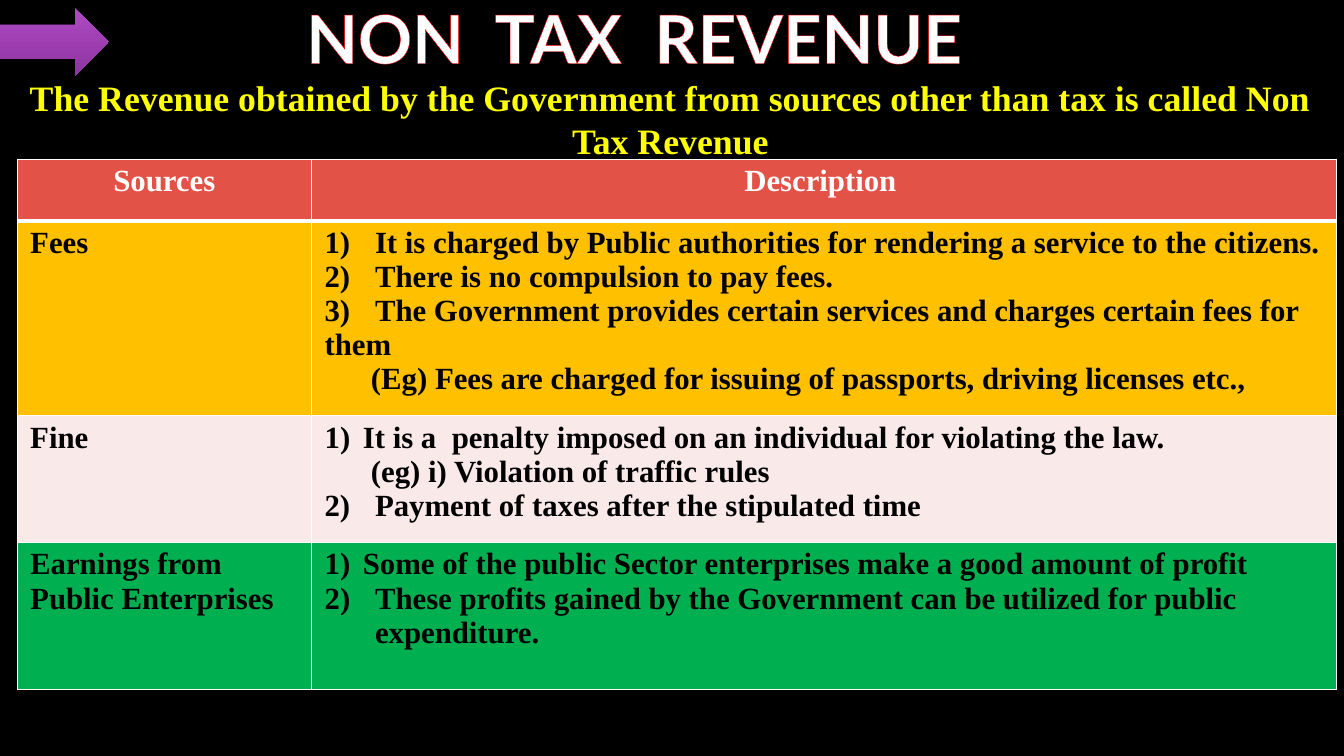
from dataclasses import dataclass

from lxml import etree
from pptx import Presentation
from pptx.dml.color import RGBColor
from pptx.enum.shapes import MSO_SHAPE
from pptx.enum.text import MSO_ANCHOR, PP_ALIGN
from pptx.oxml.ns import qn
from pptx.util import Inches, Pt

CENTER, LEFT = PP_ALIGN.CENTER, PP_ALIGN.LEFT
MIDDLE, TOP = MSO_ANCHOR.MIDDLE, MSO_ANCHOR.TOP
RIGHT_ARROW = MSO_SHAPE.RIGHT_ARROW


@dataclass(frozen=True)
class Theme:
    background: str = "000000"
    light: str = "FFFFFF"
    dark: str = "000000"
    outline: str = "FF0000"
    definition: str = "FFFF00"
    header: str = "E25247"
    fees: str = "FFC000"
    fine: str = "FAE9E9"
    earnings: str = "00B050"
    arrow: tuple = ("AE4AC2", "8F34A1")
    title_font: str = "Lato"
    body_font: str = "Times New Roman"
    title_size: float = 48
    definition_size: float = 25.5
    definition_leading: float = 30.7
    table_size: float = 22


@dataclass(frozen=True)
class Item:
    text: str
    margin: float = 0
    indent: float = 0
    number: int = 0  # automatic number, 0 for none
    tab: float = 0


THEME = Theme()
COLUMNS = (2.92, 10.17)
ROW_HEIGHTS = (0.61, 1.78, 1.26, 1.46)
ROWS = (
    ("Fees", THEME.fees, (
        Item("1)\tIt is charged by Public authorities for rendering a service "
             "to the citizens.", tab=0.41),
        Item("2)\tThere is no compulsion to pay fees.", tab=0.41),
        Item("3)\tThe Government provides certain services and charges "
             "certain fees for them", tab=0.49),
        Item("(Eg) Fees are charged for issuing of passports, driving "
             "licenses etc.,", margin=0.46),
    )),
    ("Fine", THEME.fine, (
        Item("It is a  penalty imposed on an individual for violating the law.",
             0.38, -0.38, number=1),
        Item("(eg) i) Violation of traffic rules", margin=0.46),
        Item("2)\tPayment of taxes after the stipulated time", tab=0.41),
    )),
    ("Earnings from Public Enterprises", THEME.earnings, (
        Item("Some of the public Sector enterprises make a good amount of profit",
             0.38, -0.38, number=1),
        Item("These profits gained by the Government can be utilized for "
             "public expenditure.", 0.5, -0.5, number=2),
    )),
)


def rgb(color):
    return RGBColor.from_string(color)


def style(p, font, size, color, align=LEFT):
    p.alignment = align
    for r in p.runs:
        r.font.name = font
        r.font.size = Pt(size)
        r.font.bold = True
        r.font.color.rgb = rgb(color)


def add_line(parent, tag, color, width):
    ln = etree.SubElement(parent, qn(tag), w=str(Pt(width)))
    fill = etree.SubElement(ln, qn("a:solidFill"))
    etree.SubElement(fill, qn("a:srgbClr"), val=color)
    return ln


def add_text(s, box, text, anchor):
    tf = s.shapes.add_textbox(*map(Inches, box)).text_frame
    tf.word_wrap = True
    tf.vertical_anchor = anchor
    tf.margin_left = tf.margin_right = tf.margin_top = tf.margin_bottom = 0
    tf.text = text
    return tf.paragraphs[0]


def add_title(s, box):
    p = add_text(s, box, "NON  TAX  REVENUE", MIDDLE)
    style(p, THEME.title_font, THEME.title_size, THEME.light, CENTER)
    # Thin outline around the letters
    rPr = p.runs[0].font._element
    rPr.insert(0, add_line(rPr, "a:ln", THEME.outline, 0.25))


def add_definition(s, box):
    p = add_text(s, box, "The Revenue obtained by the Government from sources "
                 "other than tax is called Non Tax Revenue", TOP)
    style(p, THEME.body_font, THEME.definition_size, THEME.definition, CENTER)
    p.line_spacing = Pt(THEME.definition_leading)


def format_item(p, item):
    pPr = p._p.get_or_add_pPr()
    pPr.set("marL", str(Inches(item.margin)))
    pPr.set("indent", str(Inches(item.indent)))
    if item.number:
        etree.SubElement(pPr, qn("a:buFont"), typeface="+mj-lt")
        etree.SubElement(pPr, qn("a:buAutoNum"), type="arabicParenR",
                         startAt=str(item.number))
    if item.tab:
        tabs = etree.SubElement(pPr, qn("a:tabLst"))
        etree.SubElement(tabs, qn("a:tab"), pos=str(Inches(item.tab)), algn="l")


def fill_cell(cell, items, fill, color, align=LEFT, top=1, bottom=1):
    cell.margin_left = cell.margin_right = Inches(0.13)
    cell.margin_top = cell.margin_bottom = Inches(0.05)
    tf = cell.text_frame
    for i, item in enumerate(items):
        p = tf.add_paragraph() if i else tf.paragraphs[0]
        p.text = item.text
        format_item(p, item)
        style(p, THEME.body_font, THEME.table_size, color, align)
    # Borders come before the fill in the cell properties
    tcPr = cell._tc.get_or_add_tcPr()
    for side, width in (("L", 1), ("R", 1), ("T", top), ("B", bottom)):
        add_line(tcPr, f"a:ln{side}", THEME.light, width)
    cell.fill.solid()
    cell.fill.fore_color.rgb = rgb(fill)


def add_sources_table(s, left, top):
    box = (left, top, sum(COLUMNS), sum(ROW_HEIGHTS))
    table = s.shapes.add_table(len(ROW_HEIGHTS), len(COLUMNS),
                               *map(Inches, box)).table
    table.horz_banding = False
    for column, width in zip(table.columns, COLUMNS):
        column.width = Inches(width)
    for row, height in zip(table.rows, ROW_HEIGHTS):
        row.height = Inches(height)
    # Header row
    for i, heading in enumerate(("Sources", "Description ")):
        fill_cell(table.cell(0, i), [Item(heading)], THEME.header,
                  THEME.light, CENTER, bottom=3)
    # One row for each source
    for i, (source, fill, items) in enumerate(ROWS, 1):
        top_width = 3 if i == 1 else 1
        fill_cell(table.cell(i, 0), [Item(source)], fill, THEME.dark,
                  top=top_width)
        fill_cell(table.cell(i, 1), items, fill, THEME.dark, top=top_width)


def add_arrow(s, box):
    sp = s.shapes.add_shape(RIGHT_ARROW, *map(Inches, box))
    sp.shadow.inherit = False
    sp.line.fill.background()
    sp.fill.gradient()
    sp.fill.gradient_angle = 270
    for i, (stop, color) in enumerate(zip(sp.fill.gradient_stops, THEME.arrow)):
        stop.position = i
        stop.color.rgb = rgb(color)


def main():
    prs = Presentation()
    prs.slide_width, prs.slide_height = Inches(13.33), Inches(7.5)
    s = prs.slides.add_slide(prs.slide_layouts[6])
    s.background.fill.solid()
    s.background.fill.fore_color.rgb = rgb(THEME.background)
    add_title(s, (0.75, -0.43, 11.08, 1.59))
    add_definition(s, (0.1, 0.75, 13.1, 0.86))
    add_sources_table(s, 0.17, 1.58)
    add_arrow(s, (-0.29, 0.08, 1.37, 0.67))
    prs.save("out.pptx")


if __name__ == "__main__":
    main()
